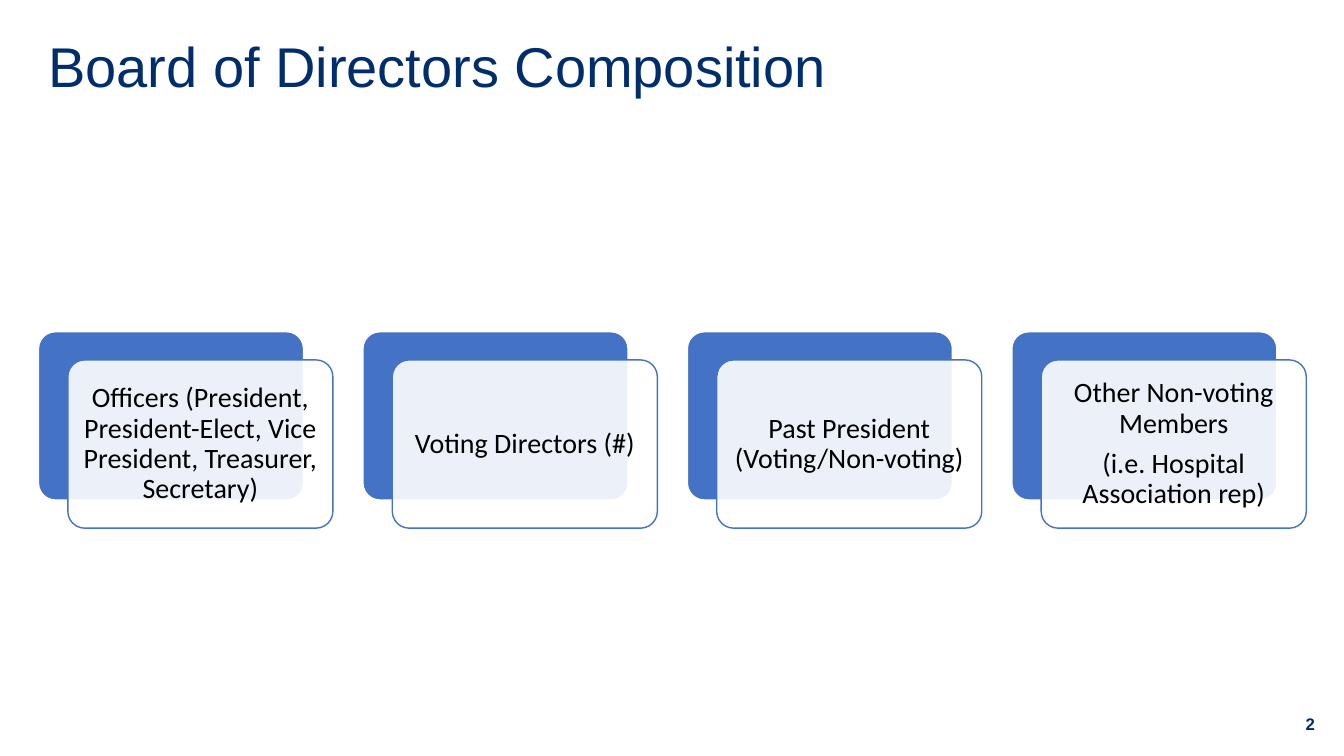
from pptx import Presentation
from pptx.dml.color import RGBColor as Rgb
from pptx.enum.shapes import MSO_SHAPE as Kind
from pptx.enum.text import MSO_ANCHOR as Anchor, PP_ALIGN as Align
from pptx.oxml.ns import qn
from pptx.util import Cm, Pt
from lxml.etree import SubElement as Sub

COLORS = {"navy": "002E6D", "blue": "4472C4", "white": "FFFFFF", "black": "000000"}
GROUPS = [
    ["Officers (President, President-Elect, Vice President, Treasurer, Secretary)"],
    ["Voting Directors (#)"],
    ["Past President (Voting/Non-voting)"],
    ["Other Non-voting Members", "(i.e. Hospital Association rep)"],
]


def color(name):
    return Rgb.from_string(COLORS[name])


def style(para, face, size, ink, bold=False):
    font = para.font
    font.name, font.size, font.bold = face, Pt(size), bold
    font.color.rgb = color(ink)


def label(slide, box, text, size, align, bold=False):
    frame = slide.shapes.add_textbox(*map(Cm, box)).text_frame
    frame.word_wrap = True
    para = frame.paragraphs[0]
    para.text = text
    para.alignment = align
    para.line_spacing = 0.9 if size > 20 else 1.0
    style(para, "Arial", size, "navy", bold)


def panel(slide, box, fill, line):
    shape = slide.shapes.add_shape(Kind.ROUNDED_RECTANGLE, *map(Cm, box))
    shape.adjustments[0] = 0.1
    shape.shadow.inherit = False
    shape.fill.solid()
    shape.fill.fore_color.rgb = color(fill)
    shape.line.color.rgb = color(line)
    shape.line.width = Pt(1)
    return shape


def card(slide, box, lines):
    left, top, width, height = box
    dx, dy = 0.74, 0.71
    size = width - dx, height - dy
    panel(slide, (left, top, *size), "blue", "white")
    front = panel(slide, (left + dx, top + dy, *size), "white", "blue")
    tone = front.fill._xPr.find(qn("a:solidFill"))[0]
    Sub(tone, qn("a:alpha"), val="90000")

    frame = front.text_frame
    frame.word_wrap = True
    frame.vertical_anchor = Anchor.MIDDLE
    frame.margin_left = frame.margin_right = Cm(0.2)
    frame.margin_top = frame.margin_bottom = Cm(0.2)
    frame.text = "\n".join(lines)
    for i, para in enumerate(frame.paragraphs):
        para.alignment = Align.CENTER
        para.line_spacing = 0.9
        if i:
            para.space_before = Pt(7)
        style(para, "Calibri", 20, "black")


def board(slide, box, groups):
    left, top, width, height = box
    wide = 7.42
    step = (width - wide) / (len(groups) - 1)
    for i, lines in enumerate(groups):
        card(slide, (left + i * step, top, wide, height), lines)


def main():
    deck = Presentation()
    deck.slide_width, deck.slide_height = Cm(33.87), Cm(19.05)
    slide = deck.slides.add_slide(deck.slide_layouts[6])
    label(slide, (0.97, 0.86, 31.98, 3.68), "Board of Directors Composition", 40, Align.LEFT)
    label(slide, (32.18, 17.86, 1.68, 1.02), "2", 12, Align.CENTER, True)
    board(slide, (0.97, 8.36, 31.95, 4.95), GROUPS)
    deck.save("out.pptx")


if __name__ == "__main__":
    main()
